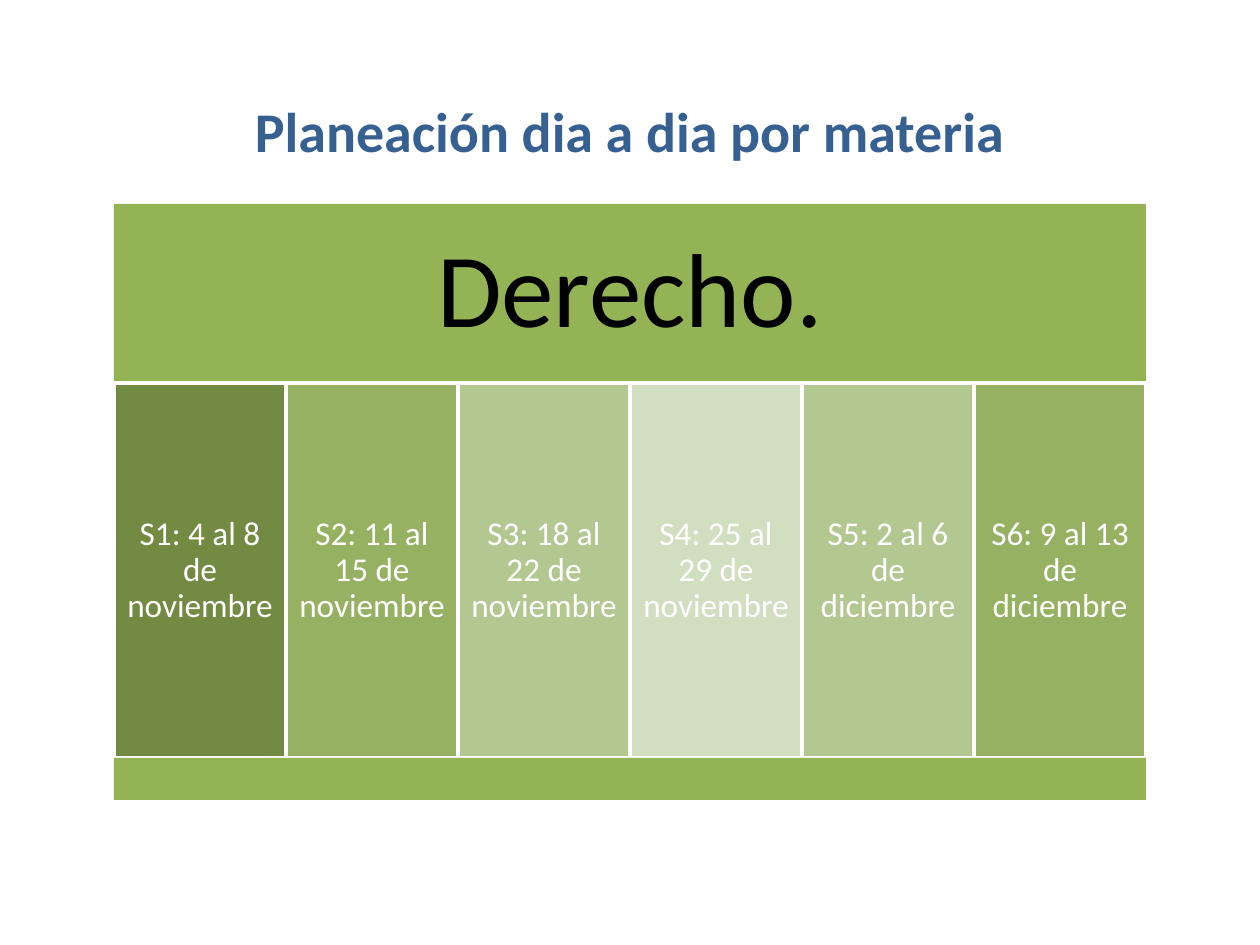
from pptx import Presentation
from pptx.dml.color import RGBColor
from pptx.enum.shapes import MSO_SHAPE as Shape
from pptx.enum.text import MSO_ANCHOR as Anchor, PP_ALIGN as Align
from pptx.util import Emu, Pt

PX = 914400 // 126
LEFT, WIDTH = 114, 1032
HEADER_TOP, HEADER_HEIGHT = 204, 179
WEEK_HEIGHT, FOOTER_HEIGHT = 375, 42
GREEN, WHITE = "94B355", "FFFFFF"

WEEKS = [
    ("S1: 4 al 8 de noviembre", "738A42"),
    ("S2: 11 al 15 de noviembre", "95B161"),
    ("S3: 18 al 22 de noviembre", "B3C791"),
    ("S4: 25 al 29 de noviembre", "D2DEC0"),
    ("S5: 2 al 6 de diciembre", "B3C791"),
    ("S6: 9 al 13 de diciembre", "95B161"),
]


def px(length):
    return Emu(length * PX)


def color(value):
    return RGBColor.from_string(value)


def add_block(slide, left, top, width, height, fill, outline=None, kind=Shape.RECTANGLE):
    block = slide.shapes.add_shape(kind, px(left), px(top), px(width), px(height))
    block.shadow.inherit = False
    block.fill.solid()
    block.fill.fore_color.rgb = color(fill)
    if outline:
        block.line.color.rgb = color(outline)
        block.line.width = Pt(2)
    else:
        block.line.fill.background()
    return block


def write(block, text, size, text_color, inset, bold=False, spacing=0.9):
    """Put one centred paragraph in the block, with equal insets on all sides."""
    frame = block.text_frame
    frame.word_wrap = True
    frame.vertical_anchor = Anchor.MIDDLE
    frame.margin_left = frame.margin_right = px(inset)
    frame.margin_top = frame.margin_bottom = px(inset)
    paragraph = frame.paragraphs[0]
    paragraph.text = text
    paragraph.alignment = Align.CENTER
    paragraph.line_spacing = spacing
    font = paragraph.font
    font.name, font.size, font.bold = "Calibri", Pt(size), bold
    font.color.rgb = color(text_color)


def add_weeks(slide, top):
    width = WIDTH // len(WEEKS)
    for index, (dates, fill) in enumerate(WEEKS):
        week = add_block(slide, LEFT + index * width, top, width, WEEK_HEIGHT, fill, WHITE)
        write(week, dates, 19, WHITE, inset=10)


def main():
    deck = Presentation()
    deck.slide_width, deck.slide_height = px(1260), px(945)
    slide = deck.slides.add_slide(deck.slide_layouts[6])

    title = add_block(slide, LEFT, 86, WIDTH, 89, WHITE, kind=Shape.ROUNDED_RECTANGLE)
    write(title, "Planeación dia a dia por materia", 32, "376092", inset=6, bold=True, spacing=1.0)

    subject = add_block(slide, LEFT, HEADER_TOP, WIDTH, HEADER_HEIGHT, GREEN)
    write(subject, "Derecho.", 60, "000000", inset=32)

    weeks_top = HEADER_TOP + HEADER_HEIGHT
    add_weeks(slide, weeks_top)
    add_block(slide, LEFT, weeks_top + WEEK_HEIGHT, WIDTH, FOOTER_HEIGHT, GREEN)

    deck.save("out.pptx")


if __name__ == "__main__":
    main()
